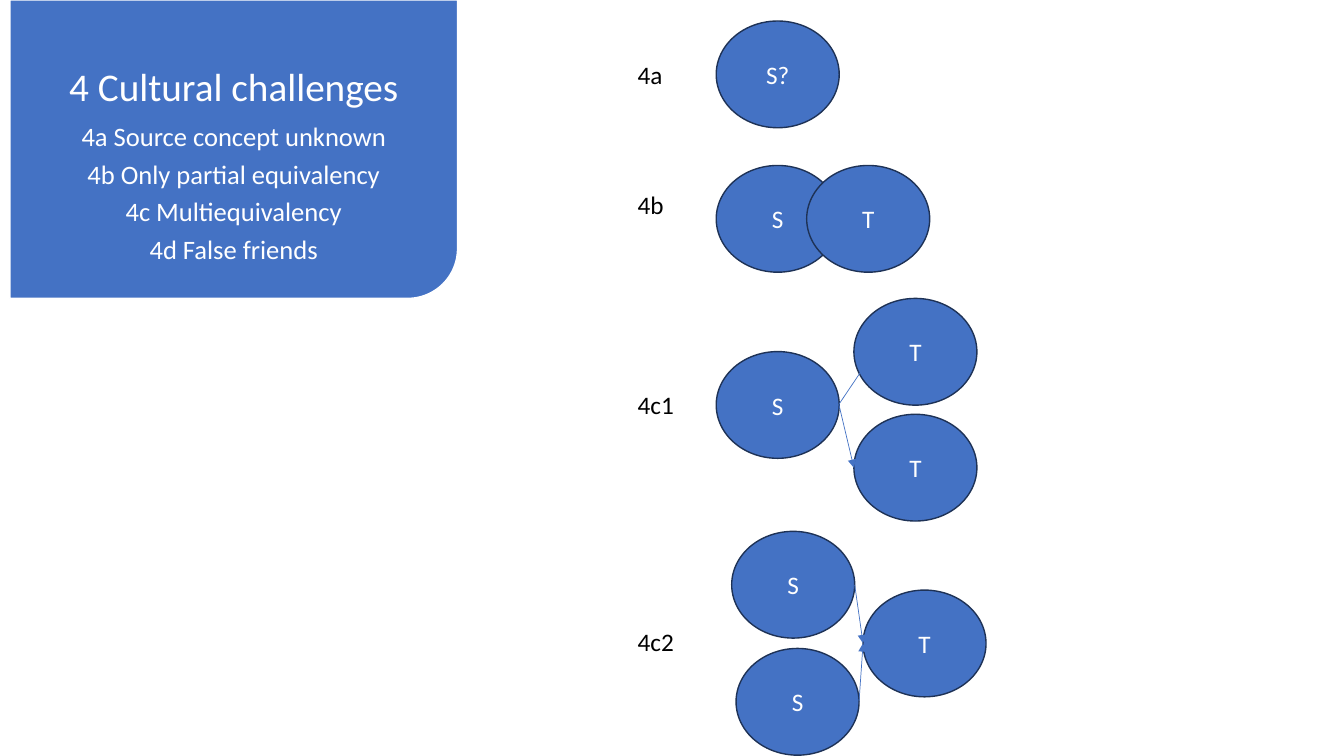
from pptx import Presentation
from pptx.dml.color import RGBColor
from pptx.enum.shapes import MSO_CONNECTOR, MSO_SHAPE
from pptx.enum.text import MSO_ANCHOR, PP_ALIGN
from pptx.oxml.ns import qn
from pptx.util import Cm, Pt
from lxml import etree

OVAL = MSO_SHAPE.OVAL
CARD = MSO_SHAPE.ROUND_1_RECTANGLE
LINE = MSO_CONNECTOR.STRAIGHT
MID = MSO_ANCHOR.MIDDLE
TOP = MSO_ANCHOR.TOP
LEFT = PP_ALIGN.LEFT
CENTER = PP_ALIGN.CENTER

COLORS = {"blue": "4472C4", "navy": "1E3256", "white": "FFFFFF", "black": "000000"}
FONT = "Calibri"
OVAL_W, OVAL_H = 3.1, 2.69

TITLE = "4 Cultural challenges"
ITEMS = [
    "4a Source concept unknown",
    "4b Only partial equivalency",
    "4c Multiequivalency",
    "4d False friends",
]

ROWS = [
    ("4a", 0.53, 0.84, [("S?", 0, 0)], []),
    ("4b", 4.17, 0.48, [("S", 0, 0), ("T", 2.28, 0)], []),
    ("4c1", 7.52, 2.16, [("S", 0, 1.34), ("T", 3.47, 0), ("T", 3.47, 2.92)],
     [(3.09, 2.67, 3.83, 1.57), (3.09, 2.67, 3.47, 4.27)]),
    ("4c2", 13.39, 2.28, [("S", 0.39, 0), ("S", 0.5, 2.95), ("T", 3.7, 1.48)],
     [(3.49, 1.35, 3.7, 2.82), (3.6, 4.27, 3.7, 2.82)]),
]


def rgb(name):
    return RGBColor.from_string(COLORS[name])


def style(para, size, color, align):
    para.font.name = FONT
    para.font.size = Pt(size)
    para.font.color.rgb = rgb(color)
    para.alignment = align


def paint(shape, edge):
    shape.shadow.inherit = False
    shape.fill.solid()
    shape.fill.fore_color.rgb = rgb("blue")
    shape.line.color.rgb = rgb(edge)
    shape.line.width = Pt(1)


def add_oval(slide, text, x, y):
    oval = slide.shapes.add_shape(OVAL, Cm(x), Cm(y), Cm(OVAL_W), Cm(OVAL_H))
    paint(oval, "navy")
    frame = oval.text_frame
    frame.vertical_anchor = MID
    frame.text = text
    style(frame.paragraphs[0], 18, "white", CENTER)


def add_arrow(slide, x1, y1, x2, y2):
    arrow = slide.shapes.add_connector(LINE, Cm(x1), Cm(y1), Cm(x2), Cm(y2))
    arrow.line.color.rgb = rgb("blue")
    arrow.line.width = Pt(0.5)
    edge = arrow.line._get_or_add_ln()
    etree.SubElement(edge, qn("a:tailEnd"), type="triangle")
    etree.SubElement(arrow._element.spPr, qn("a:effectLst"))


def add_label(slide, text, x, y):
    label = slide.shapes.add_textbox(Cm(x), Cm(y), Cm(1.47), Cm(1.02))
    frame = label.text_frame
    frame.word_wrap = True
    frame.text = text
    style(frame.paragraphs[0], 18, "black", LEFT)


def add_panel(slide, x, y, w, h):
    shift = (w - h) / 2
    card = slide.shapes.add_shape(CARD, Cm(x + shift), Cm(y - shift), Cm(h), Cm(w))
    card.rotation = 90
    paint(card, "white")

    body = slide.shapes.add_textbox(Cm(x), Cm(y + 1.7), Cm(w), Cm(h - 1.7))
    frame = body.text_frame
    frame.word_wrap = True
    frame.vertical_anchor = TOP
    frame.margin_top = frame.margin_bottom = 0
    frame.text = "\n".join([TITLE] + ITEMS)
    for i, para in enumerate(frame.paragraphs):
        style(para, 19 if i else 28, "white", CENTER)
        para.line_spacing = 0.9
        para.space_after = Pt(6.3 if i else 10)


def add_row(slide, x, y, name, drop, ovals, arrows):
    add_label(slide, name, x, y + drop)
    left = x + 2.23
    for text, dx, dy in ovals:
        add_oval(slide, text, left + dx, y + dy)
    for x1, y1, x2, y2 in arrows:
        add_arrow(slide, left + x1, y + y1, left + x2, y + y2)


def main():
    deck = Presentation()
    deck.slide_width = Cm(33.87)
    deck.slide_height = Cm(19.05)
    slide = deck.slides.add_slide(deck.slide_layouts[6])
    add_panel(slide, 0.25, 0, 11.28, 7.52)
    for name, y, drop, ovals, arrows in ROWS:
        add_row(slide, 15.82, y, name, drop, ovals, arrows)
    deck.save("out.pptx")


if __name__ == "__main__":
    main()
